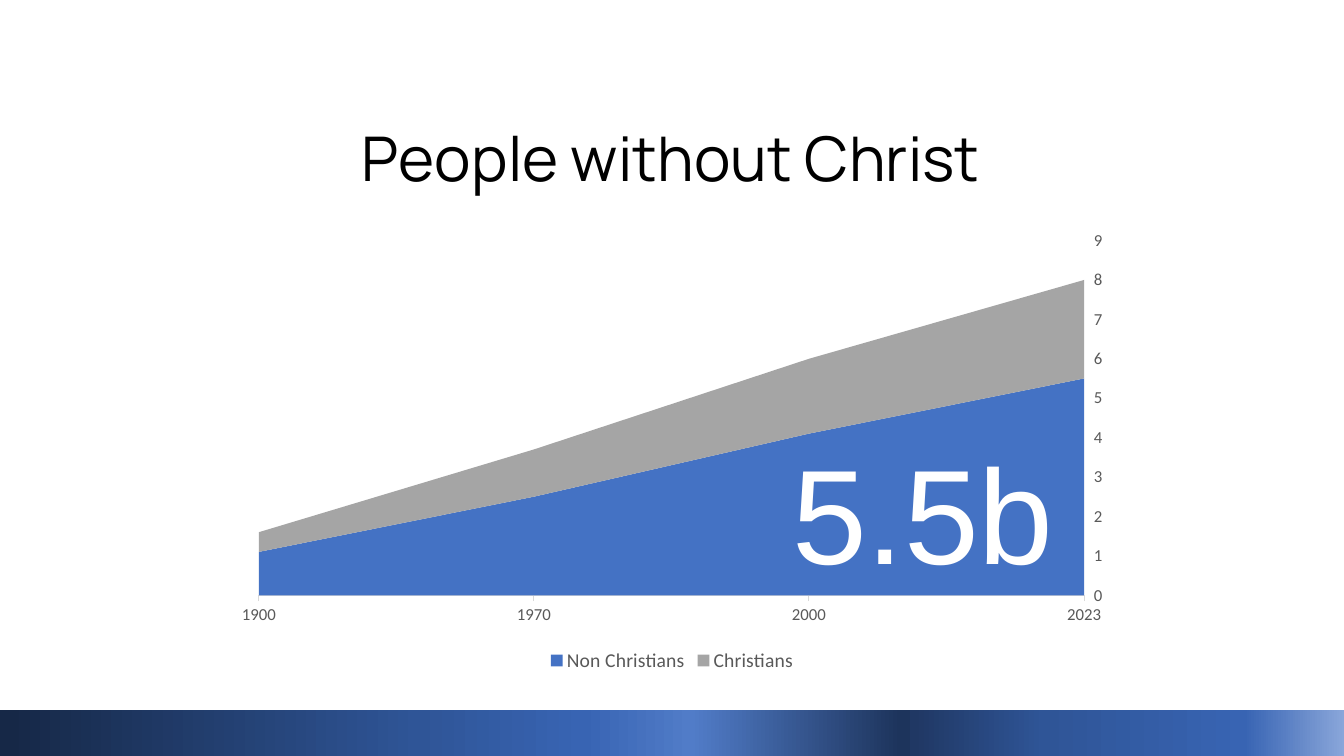
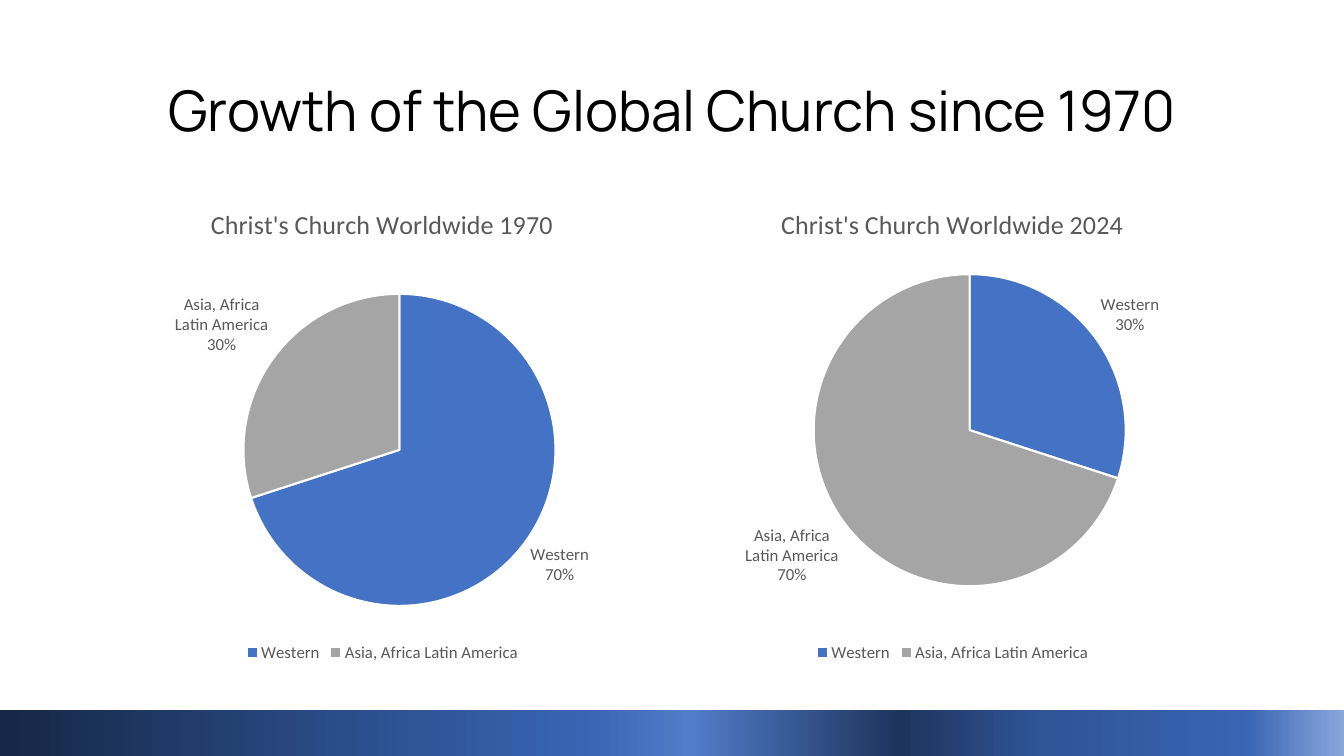
"""Build two chart slides on the growth of the church, with a shared gradient band."""
from lxml import etree
from pptx import Presentation
from pptx import util as u
from pptx.chart.data import CategoryChartData
from pptx.dml.color import RGBColor
from pptx.enum import chart as ch, shapes, text
from pptx.oxml.ns import qn

W, H = u.Inches(13.333), u.Inches(7.5)
COLORS = {"blue": "4472C4", "grey": "A5A5A5", "label": "595959", "axis": "D9D9D9",
          "black": "000000", "white": "FFFFFF"}
FILLS = [COLORS["blue"], COLORS["grey"]]
TITLE_FONT, CHART_FONT = "Manrope", "Calibri"
SPLIT, BAND_TOP = 0.677, 0.9395
BANDS = [
    (0, SPLIT, [(1, "1D345C"), (24, "517CC8"), (36, "3864B3"), (54, "2F5597"), (99, "162847")]),
    (SPLIT, 1 - SPLIT, [(0, "89A6DA"), (23, "3864B3"), (69, "2F5597"), (99, "203864")]),
]


def set_font(font, name, size, color):
    font.name, font.size, font.bold = name, u.Pt(size), False
    font.color.rgb = RGBColor.from_string(COLORS[color])


def add_chart(s, kind, data, box, title, title_font, title_at, plot_at, legend_size):
    x, y, w, h = box
    chart = s.shapes.add_chart(kind, int(W * x), int(H * y), int(W * w), int(H * h), data).chart
    set_font(chart.font, CHART_FONT, 12, "label")
    chart.has_title = chart.has_legend = True
    p = chart.chart_title.text_frame.paragraphs[0]
    p.text = title
    set_font(p.font, *title_font)
    chart.legend.position = ch.XL_LEGEND_POSITION.BOTTOM
    chart.legend.include_in_layout = False
    set_font(chart.legend.font, CHART_FONT, legend_size, "label")
    plot_area = chart.element.find(".//" + qn("c:plotArea"))
    for parent, index, shares in ((chart.chart_title.element, 1, title_at), (plot_area, 0, plot_at)):
        for old in parent.findall(qn("c:layout")):
            parent.remove(old)
        layout = etree.Element(qn("c:layout"))
        manual = etree.SubElement(layout, qn("c:manualLayout"))
        values = [("xMode", "edge"), ("yMode", "edge"), *zip("xywh", shares)]
        if parent is plot_area:
            values.insert(0, ("layoutTarget", "inner"))
        for tag, value in values:
            etree.SubElement(manual, qn("c:" + tag)).set("val", str(value))
        parent.insert(index, layout)
    return chart


prs = Presentation()
prs.slide_width, prs.slide_height = W, H
people, growth = [prs.slides.add_slide(prs.slide_layouts[6]) for _ in range(2)]

data = CategoryChartData()
data.categories = ["1900", "1970", "2000", "2023"]
data.add_series("Non Christians", [1.1, 2.5, 4.1, 5.5])
data.add_series("Christians", [0.5, 1.2, 1.9, 2.5])
chart = add_chart(people, ch.XL_CHART_TYPE.AREA_STACKED, data, (1 / 6, 0.105, 2 / 3, 0.79),
                  "People without Christ", (TITLE_FONT, 44, "black"),
                  (0.141, 0.03), (0.039, 0.27, 0.921, 0.594), 14)
for series, color in zip(chart.plots[0].series, FILLS):
    series.format.fill.solid()
    series.format.fill.fore_color.rgb = RGBColor.from_string(color)
for axis in (chart.category_axis, chart.value_axis):
    axis.has_major_gridlines = False
    axis.major_tick_mark = ch.XL_TICK_MARK.OUTSIDE
    set_font(axis.tick_labels.font, CHART_FONT, 12, "label")
chart.category_axis.format.line.color.rgb = RGBColor.from_string(COLORS["axis"])
chart.category_axis.format.line.width = u.Pt(0.75)
chart.value_axis.tick_label_position = ch.XL_TICK_LABEL_POSITION.HIGH
chart.value_axis.format.line.fill.background()
chart.value_axis.minimum_scale, chart.value_axis.maximum_scale = 0, 9
chart.value_axis.major_unit = 1

for year, left, top, shares in ((1970, 0.0757, 0.224, (70, 30)), (2024, 0.5, 0.183, (30, 70))):
    title = f"Christ's Church Worldwide {year}"
    data = CategoryChartData()
    data.categories = ["Western", "Asia, Africa Latin America"]
    data.add_series(title, shares)
    chart = add_chart(growth, ch.XL_CHART_TYPE.PIE, data, (left, 0.2465, 0.418, 0.635),
                      title, (CHART_FONT, 18.6, "label"),
                      (0.186, 0.032), (0.25, top, 0.56, 0.65), 12)
    plot = chart.plots[0]
    plot.vary_by_categories = True
    for i, color in enumerate(FILLS):
        point = plot.series[0].points[i].format
        point.fill.solid()
        point.fill.fore_color.rgb = RGBColor.from_string(color)
        point.line.color.rgb = RGBColor.from_string(COLORS["white"])
        point.line.width = u.Pt(1.5)
    labels = plot.series[0].data_labels
    labels.show_value = False
    labels.show_category_name = labels.show_percentage = True
    labels.number_format, labels.number_format_is_linked = "0%", False
    labels.position = ch.XL_LABEL_POSITION.OUTSIDE_END
    set_font(labels.font, CHART_FONT, 12, "label")
    separator = etree.Element(qn("c:separator"))
    separator.text = "\n"
    labels._element.find(qn("c:showBubbleSize")).addnext(separator)

for s, box, words, font, align in (
    (people, (0.582, 0.561, 0.24, 0.23), "5.5b", ("Arial", 96, "white"), text.PP_ALIGN.LEFT),
    (growth, (0.069, 0.053, 0.862, 0.193), "Growth of the Global Church since 1970",
     (TITLE_FONT, 40, "black"), text.PP_ALIGN.CENTER),
):
    x, y, w, h = box
    tf = s.shapes.add_textbox(int(W * x), int(H * y), int(W * w), int(H * h)).text_frame
    tf.word_wrap = True
    tf.vertical_anchor = text.MSO_ANCHOR.MIDDLE
    p = tf.paragraphs[0]
    p.text, p.alignment = words, align
    p.line_spacing = 0.9 if s is growth else 1.0
    set_font(p.font, *font)

for s in prs.slides:
    for left, width, stops in BANDS:
        sp = s.shapes.add_shape(shapes.MSO_SHAPE.RECTANGLE, int(W * left), int(H * BAND_TOP),
                                int(W * width), int(H * (1 - BAND_TOP)))
        sp.shadow.inherit = False
        sp.line.fill.background()
        sp.fill.gradient()
        sp.fill.gradient_angle = 180
        stop_list = sp.element.spPr.find(".//" + qn("a:gsLst"))
        for old in list(stop_list):
            stop_list.remove(old)
        for position, color in stops:
            stop = etree.SubElement(stop_list, qn("a:gs"), pos=str(position * 1000))
            etree.SubElement(stop, qn("a:srgbClr"), val=color)

prs.save("out.pptx")
